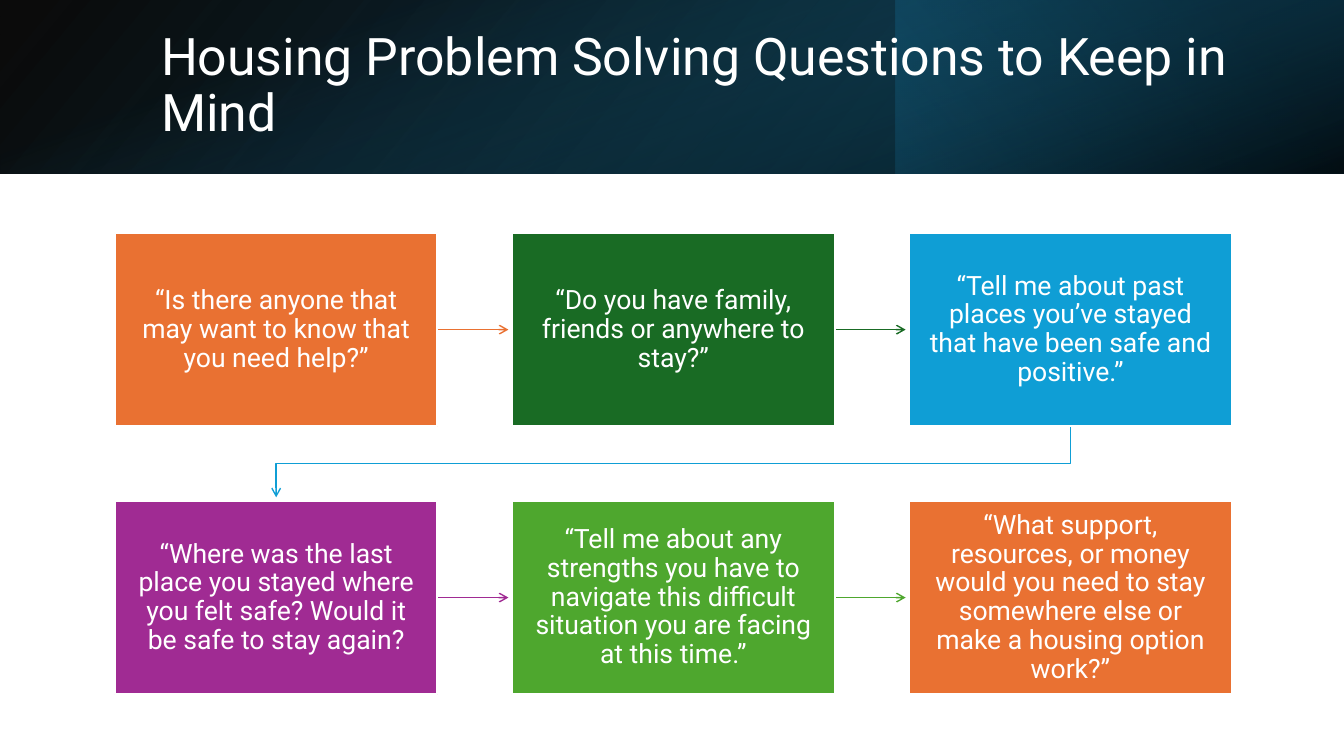
from lxml import etree
from pptx import Presentation
from pptx import util as u
from pptx.dml.color import RGBColor
from pptx.enum import shapes, text
from pptx.oxml.ns import qn

FONT = "Roboto"
WHITE = "FFFFFF"
PAGE_WIDTH, PAGE_HEIGHT, BANNER_HEIGHT = 960, 540, 123.84
COLUMNS = 3
LEFT, TOP = 82, 166.3
BOX_WIDTH, BOX_HEIGHT = 230.5, 138.3
COLUMN_STEP, ROW_STEP = 283.7, 191.4
ARROW_GAP = 2.5

QUESTIONS = [
    ("E97132", "“Is there anyone that may want to know that you need help?”"),
    ("196B24", "“Do you have family, friends or anywhere to stay?”"),
    ("0F9ED5", "“Tell me about past places you’ve stayed that have been safe and positive.”"),
    ("A02B93", "“Where was the last place you stayed where you felt safe? Would it be safe to stay again?"),
    ("4EA72E", "“Tell me about any strengths you have to navigate this difficult situation you are facing at this time.”"),
    ("E97132", "“What support, resources, or money would you need to stay somewhere else or make a housing option work?”"),
]


def color(code):
    return RGBColor.from_string(code)


def add_rectangle(page, left, top, width, height):
    box = page.shapes.add_shape(shapes.MSO_SHAPE.RECTANGLE,
                                u.Pt(left), u.Pt(top), u.Pt(width), u.Pt(height))
    box.shadow.inherit = False
    return box


def add_gradient(page, frame, stops, angle, rotation=0, flipped=False):
    """Stops are (position %, colour, opacity %); the angle runs clockwise."""
    panel = add_rectangle(page, *frame)
    panel.rotation = rotation
    panel.line.fill.background()
    if flipped:
        panel.element.spPr.find(qn("a:xfrm")).set("flipH", "1")
    panel.fill.gradient()
    panel.fill.gradient_angle = 360 - angle
    for stop, (position, code, opacity) in zip(panel.fill.gradient_stops, stops):
        stop.position = position / 100
        stop.color.rgb = color(code)
    for tint, (position, code, opacity) in zip(panel.element.spPr.iter(qn("a:srgbClr")), stops):
        etree.SubElement(tint, qn("a:alpha")).set("val", str(opacity * 1000))


def write(box, words, size, alignment, inset_x, inset_y):
    frame = box.text_frame
    frame.word_wrap = True
    frame.vertical_anchor = text.MSO_ANCHOR.MIDDLE
    frame.margin_left = frame.margin_right = u.Pt(inset_x)
    frame.margin_top = frame.margin_bottom = u.Pt(inset_y)
    frame.text = words
    para = frame.paragraphs[0]
    para.alignment = alignment
    para.line_spacing = 0.9
    span = para.runs[0]
    span.font.name = FONT
    span.font.size = u.Pt(size)
    span.font.color.rgb = color(WHITE)


def style_arrow(arrow, code):
    arrow.line.color.rgb = color(code)
    arrow.line.width = u.Pt(1)
    outline = arrow.element.spPr.get_or_add_ln()
    etree.SubElement(outline, qn("a:tailEnd")).set("type", "arrow")


def add_straight_arrow(page, left, top, code):
    """Runs from the right edge of the box at (left, top) to the next box."""
    middle = u.Pt(top + BOX_HEIGHT / 2)
    arrow = page.shapes.add_connector(
        shapes.MSO_CONNECTOR.STRAIGHT, u.Pt(left + BOX_WIDTH), middle,
        u.Pt(left + COLUMN_STEP - ARROW_GAP), middle)
    etree.SubElement(arrow.element.spPr, qn("a:effectLst"))
    style_arrow(arrow, code)


def add_return_arrow(page, left, top, code):
    """Runs from the bottom of the box at (left, top) to the start of the next row."""
    start_x, end_x = left + BOX_WIDTH / 2, LEFT + BOX_WIDTH / 2
    start_y, end_y = top + BOX_HEIGHT, top + ROW_STEP - ARROW_GAP
    bend_y = top + (BOX_HEIGHT + ROW_STEP) / 2
    points = [(start_x, bend_y), (end_x, bend_y), (end_x, end_y)]
    builder = page.shapes.build_freeform(u.Pt(start_x), u.Pt(start_y))
    builder.add_line_segments([(u.Pt(x), u.Pt(y)) for x, y in points], close=False)
    arrow = builder.convert_to_shape()
    arrow.shadow.inherit = False
    arrow.fill.background()
    style_arrow(arrow, code)


def add_question(page, left, top, code, words):
    box = add_rectangle(page, left, top, BOX_WIDTH, BOX_HEIGHT)
    box.fill.solid()
    box.fill.fore_color.rgb = color(code)
    box.line.color.rgb = color(WHITE)
    box.line.width = u.Pt(1.5)
    write(box, words, 19, text.PP_ALIGN.CENTER, 11.4, 11.4)


def add_banner(page):
    add_gradient(page, (0, 0, PAGE_WIDTH, BANNER_HEIGHT),
                 [(0, "000000", 96), (100, "104862", 100)], 140, flipped=True)
    add_gradient(page, (PAGE_WIDTH * 2 / 3, 0, PAGE_WIDTH / 3, BANNER_HEIGHT),
                 [(19, "0B3041", 68), (100, "156082", 79)], 320, rotation=180)
    offset = (PAGE_WIDTH - BANNER_HEIGHT) / 2
    add_gradient(page, (offset, -offset, BANNER_HEIGHT, PAGE_WIDTH),
                 [(23, "156082", 0), (99, "000000", 74)], 340, rotation=90)
    title = page.shapes.add_textbox(u.Pt(108), u.Pt(27.4), u.Pt(790.6), u.Pt(69))
    write(title, "Housing Problem Solving Questions to Keep in Mind",
          37, text.PP_ALIGN.LEFT, 7.2, 3.6)


def main():
    deck = Presentation()
    deck.slide_width, deck.slide_height = u.Pt(PAGE_WIDTH), u.Pt(PAGE_HEIGHT)
    page = deck.slides.add_slide(deck.slide_layouts[6])
    add_banner(page)
    for index, (code, words) in enumerate(QUESTIONS):
        row, column = divmod(index, COLUMNS)
        left, top = LEFT + column * COLUMN_STEP, TOP + row * ROW_STEP
        if column < COLUMNS - 1:
            add_straight_arrow(page, left, top, code)
        elif index < len(QUESTIONS) - 1:
            add_return_arrow(page, left, top, code)
        add_question(page, left, top, code, words)
    deck.save("out.pptx")


if __name__ == "__main__":
    main()
